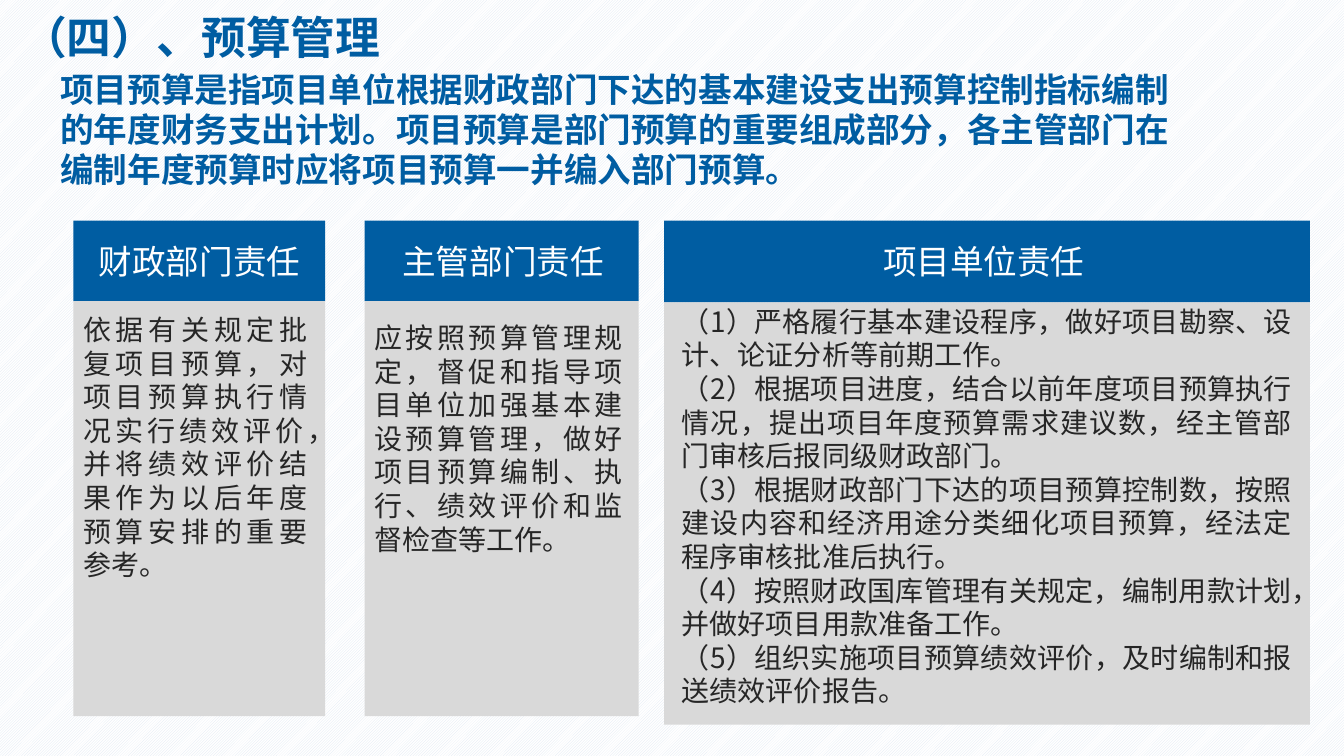
from lxml.etree import SubElement
from pptx import Presentation
from pptx.dml.color import RGBColor
from pptx.enum.dml import MSO_PATTERN
from pptx.enum.shapes import MSO_SHAPE
from pptx.enum.text import PP_ALIGN
from pptx.oxml.ns import qn
from pptx.util import Cm, Pt

FONT = "Noto Sans CJK SC"
BLUE, GREY, DARK, WHITE = "005DA2", "D9D9D9", "262626", "FFFFFF"
LINE_HEIGHT = 1.2


def paint(color_format, hex_color):
    color_format.rgb = RGBColor.from_string(hex_color)


def add_text(box, text, size, color, align=PP_ALIGN.LEFT, bold=False):
    """Add a text box at box (left, top, width, height in cm); each line of text is a paragraph."""
    text_frame = slide.shapes.add_textbox(*map(Cm, box)).text_frame
    text_frame.word_wrap = True
    text_frame.text = text
    for paragraph in text_frame.paragraphs:
        paragraph.alignment = align
        paragraph.line_spacing = Pt(size * LINE_HEIGHT)
        for run in paragraph.runs:
            run.font.size = Pt(size)
            run.font.bold = bold
            run.font.name = FONT
            paint(run.font.color, color)
            SubElement(run.font._element, qn("a:ea"), typeface=FONT)


presentation = Presentation()
presentation.slide_width = Cm(33.88)
presentation.slide_height = Cm(19.05)
slide = presentation.slides.add_slide(presentation.slide_layouts[6])

background = slide.background.fill
background.patterned()
background.pattern = MSO_PATTERN.LIGHT_UPWARD_DIAGONAL
paint(background.fore_color, "DCE6F2")
paint(background.back_color, WHITE)

add_text((0.18, 0.13, 9.8, 1.63), "（四）、预算管理", 32, BLUE, PP_ALIGN.CENTER, bold=True)
add_text(
    (1.27, 1.6, 29.16, 3.33),
    "项目预算是指项目单位根据财政部门下达的基本建设支出预算控制指标编制的年度财务支出计划。"
    "项目预算是部门预算的重要组成部分，各主管部门在编制年度预算时应将项目预算一并编入部门预算。",
    24, BLUE, bold=True,
)

# Each column: left, width, header height, body height, heading box, body box, heading, body
HEADER_TOP = 5.56
columns = [
    (1.85, 6.35, 2.03, 10.46, (2.06, 5.94, 5.94, 1.27), (1.85, 7.75, 6.15, 7.77),
     "财政部门责任",
     "依据有关规定批复项目预算，对项目预算执行情况实行绩效评价，并将绩效评价结果作为以后年度预算安排的重要参考。"),
    (9.19, 6.91, 2.03, 10.46, (9.8, 5.94, 5.77, 1.27), (9.19, 7.95, 6.76, 6.25),
     "主管部门责任",
     "应按照预算管理规定，督促和指导项目单位加强基本建设预算管理，做好项目预算编制、执行、绩效评价和监督检查等工作。"),
    (16.74, 16.28, 2.06, 10.64, (21.89, 5.94, 5.82, 1.27), (16.94, 7.54, 15.88, 10.52),
     "项目单位责任",
     "（1）严格履行基本建设程序，做好项目勘察、设计、论证分析等前期工作。\n"
     "（2）根据项目进度，结合以前年度项目预算执行情况，提出项目年度预算需求建议数，经主管部门审核后报同级财政部门。\n"
     "（3）根据财政部门下达的项目预算控制数，按照建设内容和经济用途分类细化项目预算，经法定程序审核批准后执行。\n"
     "（4）按照财政国库管理有关规定，编制用款计划，并做好项目用款准备工作。\n"
     "（5）组织实施项目预算绩效评价，及时编制和报送绩效评价报告。"),
]

for left, width, header_height, body_height, heading_box, body_box, heading, body in columns:
    panels = [
        (HEADER_TOP, header_height, BLUE),
        (HEADER_TOP + header_height, body_height, GREY),
    ]
    for top, height, color in panels:
        shape = slide.shapes.add_shape(
            MSO_SHAPE.RECTANGLE, Cm(left), Cm(top), Cm(width), Cm(height))
        shape.shadow.inherit = False
        shape.fill.solid()
        paint(shape.fill.fore_color, color)
        shape.line.fill.background()
    add_text(heading_box, heading, 24, WHITE, PP_ALIGN.CENTER)
    add_text(body_box, body, 20, DARK, PP_ALIGN.JUSTIFY)

presentation.save("out.pptx")
